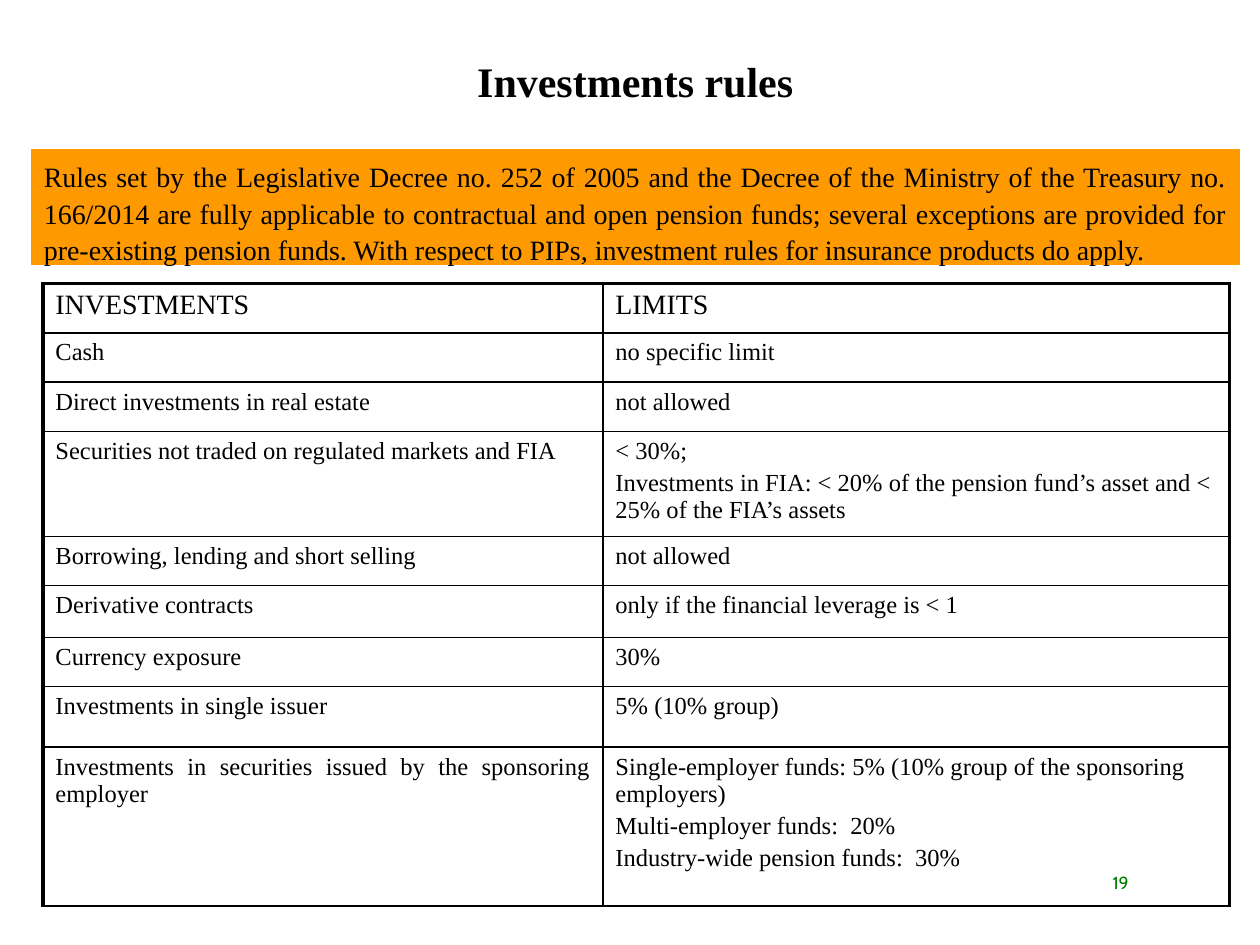
"""Build the slide on investment rules for pension funds."""
import dataclasses
import typing

import lxml.etree
import pptx
import pptx.dml.color
import pptx.enum.shapes
import pptx.enum.text
import pptx.oxml.ns
import pptx.util

Pt = pptx.util.Pt
Align = pptx.enum.text.PP_ALIGN
Anchor = pptx.enum.text.MSO_ANCHOR
SERIF = "Times New Roman"
BLACK, WHITE, ORANGE, GREEN = "000000", "FFFFFF", "FF9900", "008000"
THICK, THIN = 2.25, 1


@dataclasses.dataclass
class Box:
    left: float
    top: float
    width: float
    height: float

    def spots(self) -> list[int]:
        return [Pt(v) for v in dataclasses.astuple(self)]


@dataclasses.dataclass
class Rule:
    height: float
    name: str
    limit: str
    size: int = 14
    just: bool = False


TITLE = Box(18, 28, 690, 36)
BANNER = Box(18, 85.5, 690, 65.5)
GRID = Box(24.5, 162, 678, 356)
NUMBER = Box(551, 490, 101, 29)
COLS = (320, 358)
RULES = [
    Rule(28.2, "INVESTMENTS", "LIMITS", size=16),
    Rule(28.2, "Cash", "no specific limit"),
    Rule(28.2, "Direct investments in real estate", "not allowed"),
    Rule(60, "Securities not traded on regulated markets and FIA",
         "< 30%;\nInvestments in FIA: < 20% of the pension fund’s asset"
         " and < 25% of the FIA’s assets"),
    Rule(28.2, "Borrowing, lending and short selling", "not allowed"),
    Rule(29.5, "Derivative contracts", "only if the financial leverage is < 1"),
    Rule(28.2, "Currency exposure", "30%"),
    Rule(34.5, "Investments in single issuer", "5% (10% group)", just=True),
    Rule(91, "Investments in securities issued by the sponsoring employer",
         "Single-employer funds: 5% (10% group of the sponsoring employers)\n"
         "Multi-employer funds:  20%\nIndustry-wide pension funds:  30%",
         just=True),
]
NOTE = (
    "Rules set by the Legislative Decree no. 252 of 2005 and the Decree of the "
    "Ministry of the Treasury no. 166/2014 are fully applicable to contractual "
    "and open pension funds; several exceptions are provided for pre-existing "
    "pension funds. With respect to PIPs, investment rules for insurance "
    "products do apply."
)


def apply(item: typing.Any, form: dict[str, typing.Any]) -> None:
    for key, value in form.items():
        setattr(item, key, value)


def tint(part: typing.Any, shade: str) -> None:
    part.solid()
    part.fore_color.rgb = pptx.dml.color.RGBColor.from_string(shade)


def write(frame: typing.Any, text: str, size: float, para: dict[str, typing.Any],
          face: str = SERIF, shade: str = BLACK, bold: bool = False) -> None:
    frame.text = text
    for line in frame.paragraphs:
        apply(line, para)
        apply(line.font, {"name": face, "size": Pt(size), "bold": bold})
        tint(line.font.fill, shade)


def edge(cell: typing.Any, sides: dict[str, float]) -> None:
    props = cell._tc.get_or_add_tcPr()
    for side, width in sides.items():
        line = lxml.etree.SubElement(
            props, pptx.oxml.ns.qn(f"a:ln{side}"), w=str(Pt(width)))
        fill = lxml.etree.SubElement(line, pptx.oxml.ns.qn("a:solidFill"))
        lxml.etree.SubElement(fill, pptx.oxml.ns.qn("a:srgbClr"), val=BLACK)


def head(slide: typing.Any) -> None:
    title = slide.shapes.title
    apply(title, dict(zip(("left", "top", "width", "height"), TITLE.spots())))
    apply(title.text_frame, {
        "word_wrap": True, "vertical_anchor": Anchor.TOP,
        "auto_size": pptx.enum.text.MSO_AUTO_SIZE.NONE})
    write(title.text_frame, "Investments rules", 24,
          {"alignment": Align.CENTER}, bold=True)


def banner(slide: typing.Any) -> None:
    rect = slide.shapes.add_shape(
        pptx.enum.shapes.MSO_SHAPE.RECTANGLE, *BANNER.spots())
    rect.shadow.inherit = False
    tint(rect.fill, ORANGE)
    tint(rect.line.fill, ORANGE)
    rect.line.width = Pt(0.75)
    apply(rect.text_frame, {"word_wrap": True, "vertical_anchor": Anchor.TOP})
    write(rect.text_frame, NOTE, 16,
          {"alignment": Align.JUSTIFY, "line_spacing": 1.1})


def grid(slide: typing.Any) -> None:
    table = slide.shapes.add_table(len(RULES), len(COLS), *GRID.spots()).table
    apply(table, {"first_row": False, "horz_banding": False})
    for col, width in zip(table.columns, COLS):
        col.width = Pt(width)
    for r, rule in enumerate(RULES):
        table.rows[r].height = Pt(rule.height)
        for c, text in enumerate((rule.name, rule.limit)):
            cell = table.cell(r, c)
            edge(cell, {"L": THIN if c else THICK, "R": THICK if c else THIN,
                        "T": THIN if r else THICK, "B": THIN})
            tint(cell.fill, WHITE)
            just = rule.just and c == 0
            write(cell.text_frame, text, rule.size, {
                "alignment": Align.JUSTIFY if just else Align.LEFT,
                "space_before": Pt(0 if just else rule.size * 0.2)})


def number(slide: typing.Any) -> None:
    frame = slide.shapes.add_textbox(*NUMBER.spots()).text_frame
    apply(frame, {"word_wrap": True, "vertical_anchor": Anchor.MIDDLE})
    write(frame, "19", 10, {"alignment": Align.RIGHT}, face="Cabin", shade=GREEN)


def main() -> None:
    deck = pptx.Presentation()
    apply(deck, {"slide_width": Pt(720), "slide_height": Pt(540)})
    slide = deck.slides.add_slide(deck.slide_layouts[5])
    for draw in (head, banner, grid, number):
        draw(slide)
    deck.save("out.pptx")


if __name__ == "__main__":
    main()
